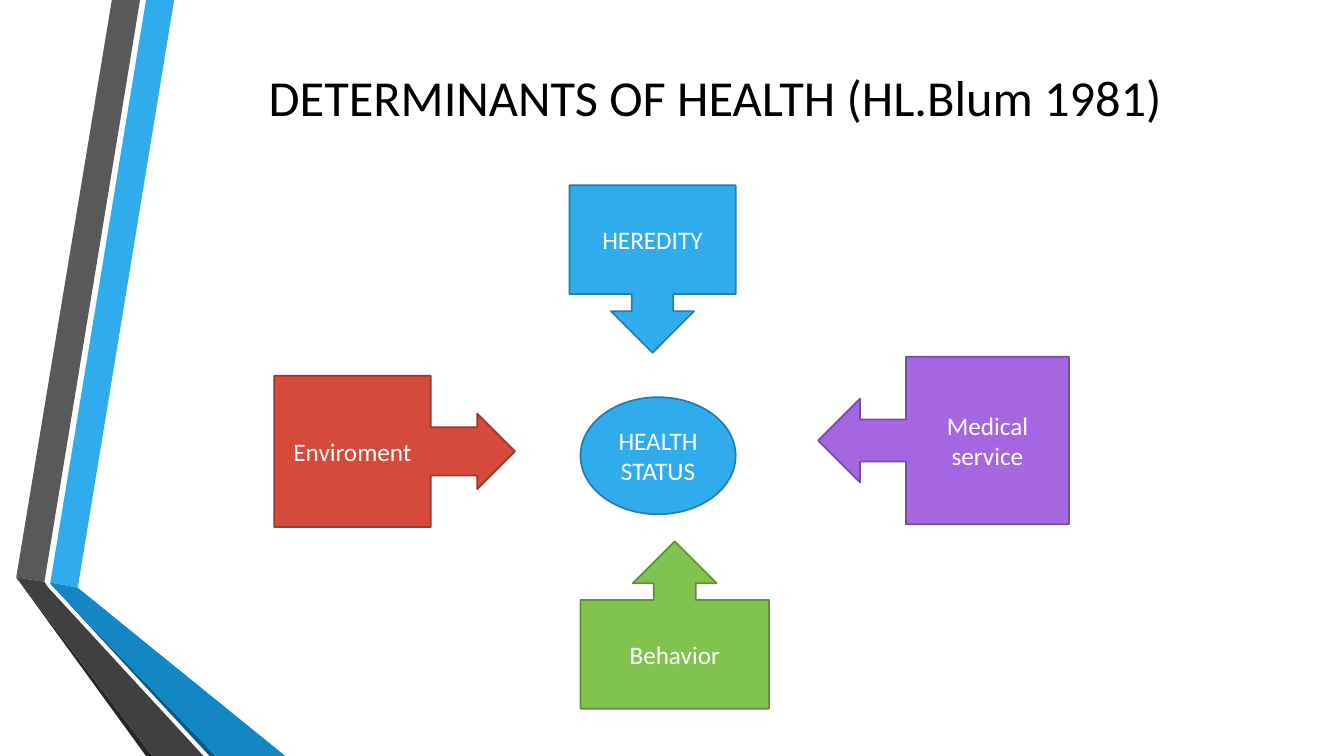
"""Builds the slide on the determinants of health."""
from pptx import Presentation
from pptx.dml.color import RGBColor
from pptx.enum.shapes import MSO_SHAPE as Preset
from pptx.enum.text import MSO_ANCHOR as Anchor, MSO_AUTO_SIZE as AutoSize, PP_ALIGN as Align
from pptx.util import Cm, Pt

FONT = "Calibri"
COLOURS = {
    "black": "000000", "white": "FFFFFF",
    "blue": "30ACEC", "blue_edge": "247FAF", "deep_blue": "1287C3", "navy": "0C5A82",
    "grey": "595959", "charcoal": "404040", "coal": "262626",
    "red": "D64A3B", "red_edge": "9E372C",
    "purple": "A666E1", "purple_edge": "7B4BA6",
    "green": "80C34F", "green_edge": "5F903A",
}
RIBBONS = [
    ("blue", [(1.27, 14.68), (1.96, 14.81), (4.39, 0), (3.68, 0)]),
    ("grey", [(3.53, 0), (2.82, 0), (0.41, 14.55), (1.12, 14.66)]),
    ("coal", [(0.41, 14.55), (3.68, 19.05), (3.84, 19.05)]),
    ("navy", [(1.27, 14.71), (5.28, 19.05), (5.44, 19.05)]),
    ("deep_blue", [(1.27, 14.71), (5.44, 19.05), (7.19, 19.05), (1.96, 14.81), (1.27, 14.68)]),
    ("charcoal", [(5.13, 19.05), (1.22, 14.81), (1.12, 14.66), (0.41, 14.55), (3.84, 19.05)]),
]
FACTORS = [
    (Preset.RIGHT_ARROW_CALLOUT, (6.91, 9.47, 6.07, 3.81), "red", ["Enviroment"]),
    (Preset.DOWN_ARROW_CALLOUT, (14.35, 4.67, 4.19, 4.22), "blue", ["HEREDITY"]),
    (Preset.LEFT_ARROW_CALLOUT, (20.62, 8.99, 6.32, 4.22), "purple", ["Medical service"]),
    (Preset.UP_ARROW_CALLOUT, (14.63, 13.64, 4.75, 4.22), "green", ["Behavior"]),
    (Preset.FLOWCHART_CONNECTOR, (14.63, 10.01, 3.91, 2.95), "blue", ["HEALTH", "STATUS"]),
]


def colour(key):
    """Return the named colour."""
    return RGBColor.from_string(COLOURS[key])


def paint(shape, fill):
    """Give a shape a flat fill without shadow."""
    shape.shadow.inherit = False
    shape.fill.solid()
    shape.fill.fore_color.rgb = colour(fill)


def write(frame, lines, size, ink):
    """Write centred lines into a text frame."""
    frame.word_wrap = True
    frame.vertical_anchor = Anchor.MIDDLE
    for index, line in enumerate(lines):
        paragraph = frame.add_paragraph() if index else frame.paragraphs[0]
        paragraph.alignment = Align.CENTER
        run = paragraph.add_run()
        run.text = line
        run.font.name = FONT
        run.font.size = Pt(size)
        run.font.color.rgb = colour(ink)


def add_ribbon(slide, fill, corners):
    """Draw one folded ribbon face at the left edge."""
    points = [(Cm(x), Cm(y)) for x, y in corners]
    outline = slide.shapes.build_freeform(*points[0])
    outline.add_line_segments(points[1:], close=True)
    ribbon = outline.convert_to_shape()
    paint(ribbon, fill)
    ribbon.line.fill.background()


def add_factor(slide, preset, box, fill, lines):
    """Draw one labelled shape of the diagram."""
    factor = slide.shapes.add_shape(preset, *map(Cm, box))
    paint(factor, fill)
    factor.line.color.rgb = colour(fill + "_edge")
    factor.line.width = Pt(1.25)
    write(factor.text_frame, lines, 18, "white")
    return factor


def set_title(slide, text):
    """Place and fill the title."""
    title = slide.shapes.title
    title.left, title.top, title.width, title.height = map(Cm, (4.11, 1.57, 27.84, 1.73))
    title.text_frame.auto_size = AutoSize.NONE
    write(title.text_frame, [text], 36, "black")


def main():
    """Build and save the slide."""
    deck = Presentation()
    deck.slide_width, deck.slide_height = Cm(33.87), Cm(19.05)
    slide = deck.slides.add_slide(deck.slide_layouts[5])
    for ribbon in RIBBONS:
        add_ribbon(slide, *ribbon)
    set_title(slide, "DETERMINANTS OF HEALTH (HL.Blum 1981)")
    environment, *_ = [add_factor(slide, *factor) for factor in FACTORS]
    for index, ratio in enumerate((0.32, 0.25, 0.25, 0.65)):
        environment.adjustments[index] = ratio
    deck.save("out.pptx")


if __name__ == "__main__":
    main()
